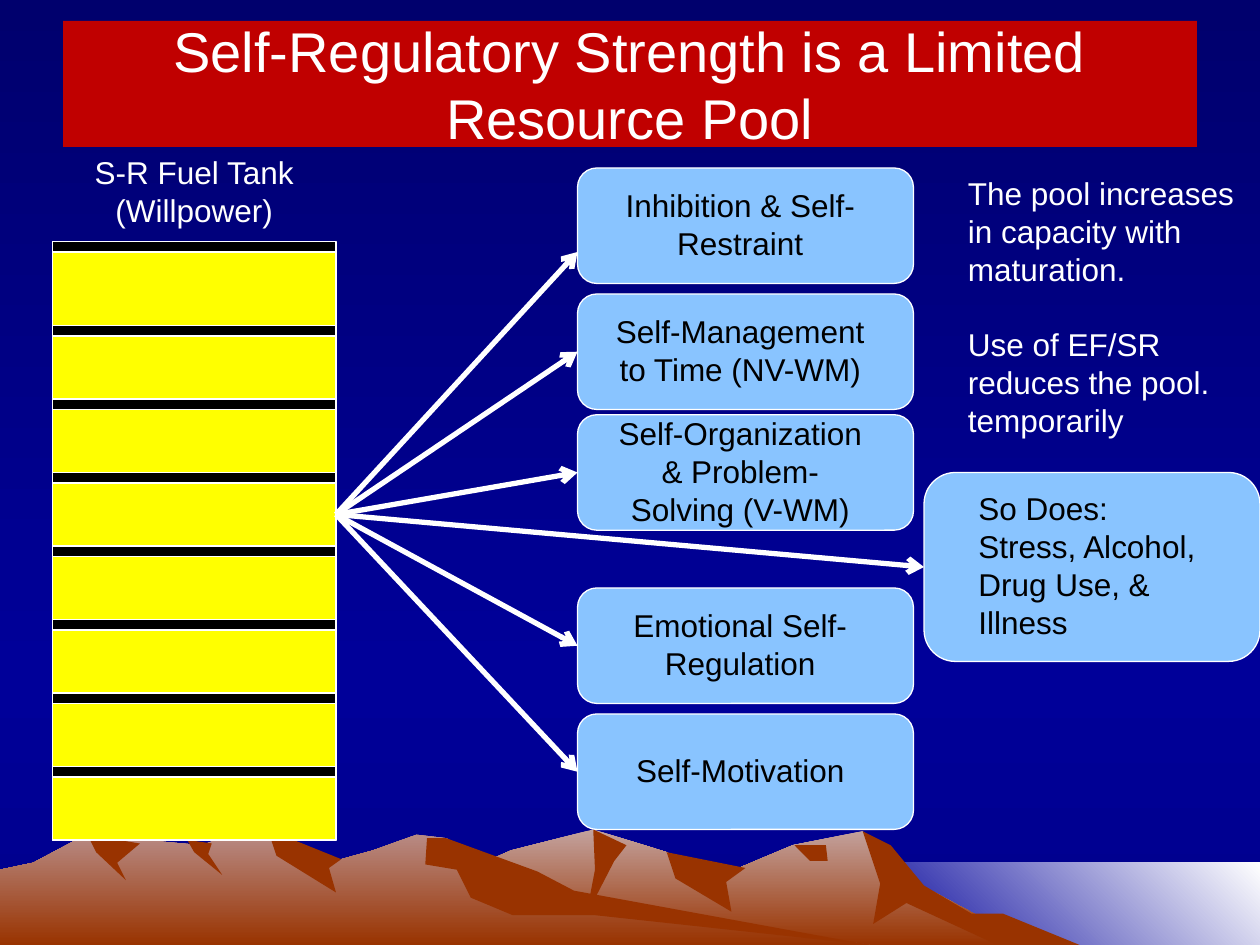
import pptx
import pptx.util
import pptx.dml.color
import pptx.enum.shapes
import pptx.enum.text
import pptx.oxml.ns
import lxml.etree

Pt = pptx.util.Pt
SHAPE = pptx.enum.shapes.MSO_SHAPE
ALIGN = pptx.enum.text.PP_ALIGN
ANCHOR = pptx.enum.text.MSO_ANCHOR
qn = pptx.oxml.ns.qn

# Content
TITLE = "Self-Regulatory Strength is a Limited Resource Pool"
TANK_LABEL = ["S-R Fuel Tank", "(Willpower)"]
POOL_NOTES = ["The pool increases in capacity with maturation.",
              "Use of EF/SR reduces the pool. temporarily"]
DRAINS = ["So Does:", "Stress, Alcohol,", "Drug Use, & Illness"]
# wording, box top, lines the wording takes
FUNCTIONS = [
    ("Inhibition & Self-Restraint", 96, 2),
    ("Self-Management to Time (NV-WM)", 168, 2),
    ("Self-Organization & Problem-Solving (V-WM)", 237, 3),
    ("Emotional Self-Regulation", 336, 2),
    ("Self-Motivation", 408, 1),
]

WHITE, BLACK, YELLOW, RED, SKY = "FFFFFF", "000000", "FFFF00", "C00000", "89C4FF"
NIGHT, BLUE, DEEP, ROCK = "00006D", "000099", "00008C", "993300"
LINE_HEIGHT = 21.6

# Backdrop bands: gradient, place
BANDS = [
    ((BLUE, DEEP, 270), (0, 384, 720, 156)),
    ((NIGHT, BLUE, 270), (0, 0, 720, 384)),
    ((BLUE, WHITE, 45), (492, 493, 228, 47)),
]
# Mountains, in points: fill, outline
MOUNTAINS = [
    (("C3A29E", ROCK, 270), [
        (186, 540), (256, 502), (292, 486), (339, 474), (365, 482), (381, 487),
        (408, 502), (453, 483), (493, 475), (521, 503), (590, 540)]),
    (ROCK, [
        (493, 475), (509, 483), (528, 506), (555, 522), (573, 522), (617, 540),
        (570, 540), (518, 516), (499, 528), (503, 505)]),
    (ROCK, [(339, 474), (358, 483), (351, 492), (335, 523), (340, 497)]),
    (ROCK, [(381, 487), (426, 496), (415, 504), (418, 521), (386, 502)]),
    (ROCK, [(454, 483), (472, 483), (473, 492), (463, 492)]),
    (("B98E8A", ROCK, 270), [
        (0, 540), (0, 497), (19, 493), (49, 477), (115, 483), (141, 474),
        (153, 474), (170, 490), (195, 491), (213, 486), (238, 477), (255, 479),
        (311, 513), (497, 540)]),
    (ROCK, [(153, 474), (195, 491), (188, 496), (192, 510), (158, 489)]),
    (ROCK, [
        (244, 479), (255, 479), (307, 498), (328, 509), (497, 540), (340, 523),
        (293, 523), (269, 513), (261, 497), (243, 494)]),
    (ROCK, [(107, 480), (121, 482), (119, 488), (127, 500), (111, 487)]),
    (ROCK, [(50, 477), (80, 482), (67, 493), (72, 503), (55, 487)]),
]


def colour(value):
    return pptx.dml.color.RGBColor.from_string(value)


def paint(fill, value):
    """Fill with one colour, or with (start, end, angle)."""
    if isinstance(value, str):
        fill.solid()
        fill.fore_color.rgb = colour(value)
        return
    *ends, angle = value
    fill.gradient()
    fill.gradient_angle = angle
    for position, (stop, end) in enumerate(zip(fill.gradient_stops, ends)):
        stop.position = position
        stop.color.rgb = colour(end)


def finish(shape, value, edge=None):
    shape.shadow.inherit = False
    paint(shape.fill, value)
    if edge:
        shape.line.color.rgb = colour(edge)
        shape.line.width = Pt(0.75)
    else:
        shape.line.fill.background()


def add_mountain(page, value, points):
    builder = page.shapes.build_freeform(*points[0], scale=Pt(1))
    builder.add_line_segments(points[1:], close=True)
    finish(builder.convert_to_shape(), value)


def add_box(page, kind, place, value, edge=WHITE):
    box = page.shapes.add_shape(kind, *map(Pt, place))
    finish(box, value, edge)
    return box


def write(frame, lines, size, value, align, gap=0):
    frame.word_wrap = True
    for index, line in enumerate(lines):
        para = frame.paragraphs[0] if index == 0 else frame.add_paragraph()
        para.text = line
        para.alignment = align
        para.space_before = Pt(gap if index else 0)
        para.font.size = Pt(size)
        para.font.name = "Arial"
        para.font.color.rgb = colour(value)


def add_text(page, place, lines, value, align, gap=0):
    box = page.shapes.add_textbox(*map(Pt, place))
    write(box.text_frame, lines, 18, value, align, gap)


def add_arrow(page, source, target, end=None):
    """Run from the source's right side to the target's left side, or to end."""
    x, y = end or (0, 0)
    arrow = page.shapes.add_connector(
        pptx.enum.shapes.MSO_CONNECTOR.STRAIGHT,
        source.left + source.width, source.top + source.height // 2, Pt(x), Pt(y))
    arrow.begin_connect(source, 3)
    if end is None:
        arrow.end_connect(target, 1)
    arrow.line.color.rgb = colour(WHITE)
    arrow.line.width = Pt(3)
    properties = arrow.element.spPr
    lxml.etree.SubElement(properties.find(qn("a:ln")), qn("a:tailEnd"), type="arrow")
    lxml.etree.SubElement(properties, qn("a:effectLst"))


def main():
    deck = pptx.Presentation()
    deck.slide_width, deck.slide_height = Pt(720), Pt(540)
    page = deck.slides.add_slide(deck.slide_layouts[5])

    # Night sky and mountains
    paint(page.background.fill, (NIGHT, BLUE, 270))
    for value, place in BANDS:
        add_box(page, SHAPE.RECTANGLE, place, value, edge=None)
    for value, points in MOUNTAINS:
        add_mountain(page, value, points)

    # Title, brought in front of the landscape
    title = page.shapes.title
    title.element.getparent().append(title.element)
    title.left, title.top, title.width, title.height = map(Pt, (36, 12, 648, 72))
    paint(title.fill, RED)
    title.text_frame.vertical_anchor = ANCHOR.MIDDLE
    write(title.text_frame, [TITLE], 32, WHITE, ALIGN.CENTER)

    # Fuel tank: a taller top cell, then seven equal ones
    add_box(page, SHAPE.RECTANGLE, (30, 138, 162, 342), BLACK)
    add_box(page, SHAPE.RECTANGLE, (30, 144, 162, 42), YELLOW)
    cells = [add_box(page, SHAPE.RECTANGLE, (30, 192 + 42 * row, 162, 36), YELLOW)
             for row in range(7)]
    outlet = cells[2]
    add_text(page, (30, 84, 162, 51), TANK_LABEL, WHITE, ALIGN.CENTER)

    # Functions fed by the tank; the first arrow meets its box below the middle
    for index, (wording, top, lines) in enumerate(FUNCTIONS):
        box = add_box(page, SHAPE.ROUNDED_RECTANGLE, (330, top, 192, 66), SKY)
        height = lines * LINE_HEIGHT + 7.2
        add_text(page, (342, top + 32 - height / 2, 162, height), [wording],
                 BLACK, ALIGN.CENTER)
        add_arrow(page, outlet, box, (330, 144) if index == 0 else None)

    # Notes and other drains on the pool
    add_text(page, (546, 96, 174, 204), POOL_NOTES, WHITE, ALIGN.LEFT, LINE_HEIGHT)
    drain = add_box(page, SHAPE.ROUNDED_RECTANGLE, (528, 270, 192, 108), SKY)
    add_text(page, (552, 276, 144, 94), DRAINS, BLACK, ALIGN.LEFT)
    add_arrow(page, outlet, drain)

    deck.save("out.pptx")


if __name__ == "__main__":
    main()
